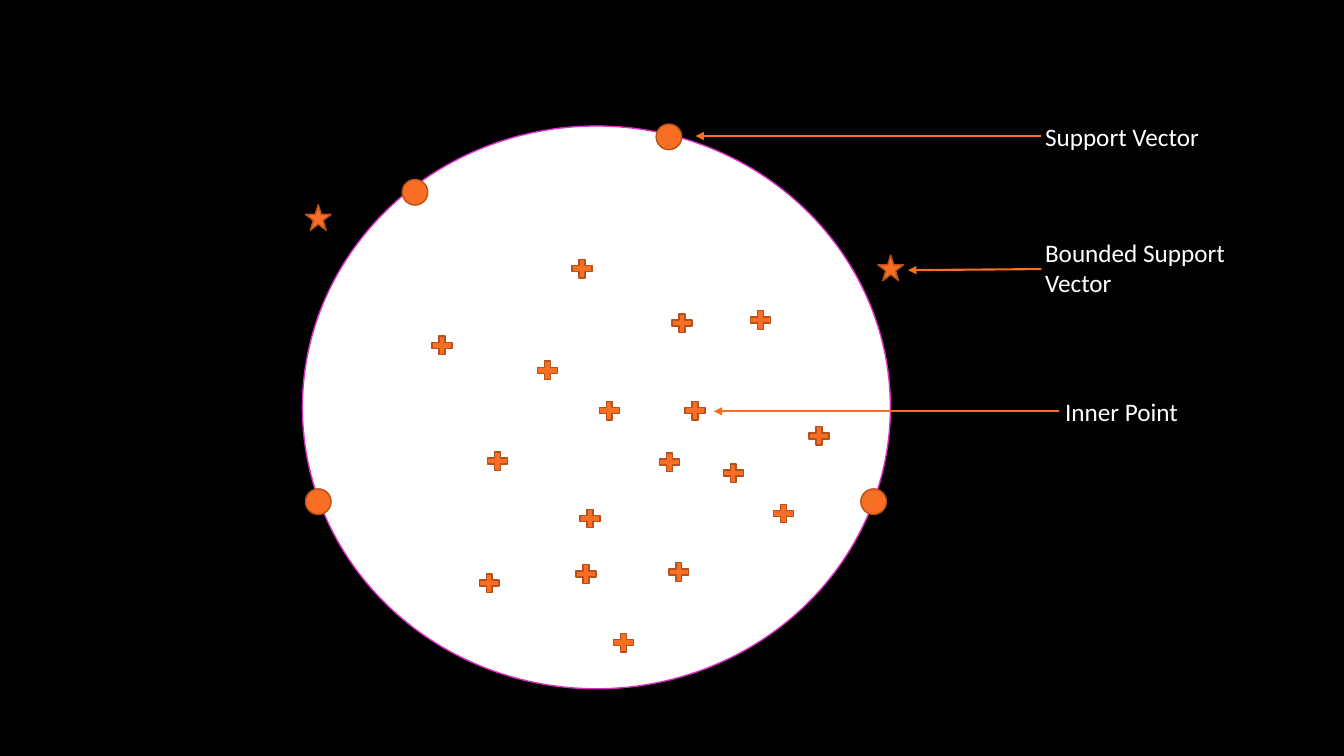
import pptx
import pptx.dml.color
import pptx.enum.shapes
import pptx.enum.text
import pptx.oxml.ns
import pptx.util
from lxml import etree

Pt = pptx.util.Pt
RGBColor = pptx.dml.color.RGBColor
SHAPE = pptx.enum.shapes.MSO_SHAPE
qn = pptx.oxml.ns.qn

BLACK = RGBColor(0x00, 0x00, 0x00)
WHITE = RGBColor(0xFF, 0xFF, 0xFF)
MAGENTA = RGBColor(0xDB, 0x30, 0xC7)
ORANGE = RGBColor(0xF8, 0x6E, 0x24)
BROWN = RGBColor(0xB7, 0x51, 0x1B)

deck = pptx.Presentation()
deck.slide_width, deck.slide_height = Pt(960), Pt(540)
page = deck.slides.add_slide(deck.slide_layouts[6])
page.background.fill.solid()
page.background.fill.fore_color.rgb = BLACK


def add_marker(kind, left, top, width, height, fill, outline):
    marker = page.shapes.add_shape(kind, Pt(left), Pt(top), Pt(width), Pt(height))
    marker.shadow.inherit = False
    marker.fill.solid()
    marker.fill.fore_color.rgb = fill
    marker.line.color.rgb = outline
    marker.line.width = Pt(1)


# Enclosing sphere
add_marker(SHAPE.OVAL, 216, 90, 420, 402, WHITE, MAGENTA)

# Data points: kind, width, height, top left corners
support_vectors = [(468.7, 88.6), (287.3, 128.2), (614.9, 349.2), (218.2, 349.2)]
inner_points = [
    (406.1, 182.9), (306, 237.6), (425.5, 284.4), (477.4, 221.8), (345.6, 320.4),
    (339.8, 407.5), (409, 401), (411.8, 361.4), (486.7, 284.4), (468.7, 321.1),
    (475.2, 399.6), (514.1, 329), (533.5, 219.6), (575.3, 302.4), (550.1, 357.8),
    (381.6, 255.6), (435.6, 450),
]
bounded_vectors = [(218.2, 146.2), (627.1, 182.2)]
for kind, width, height, corners in [
    (SHAPE.FLOWCHART_CONNECTOR, 18.3, 18.3, support_vectors),
    (SHAPE.MATH_PLUS, 19.4, 18, inner_points),
    (SHAPE.STAR_5_POINT, 18.3, 18.3, bounded_vectors),
]:
    for left, top in corners:
        add_marker(kind, left, top, width, height, ORANGE, BROWN)

# Labels with arrows: text, text box, arrow start, arrow end
labels = [
    ("Support Vector", (739.4, 82.8, 126.7, 28.8), (743.8, 97.2), (496.8, 97.2)),
    ("Bounded Support Vector", (739.4, 165.6, 159.1, 51.1), (743.8, 192.2), (648.7, 193)),
    ("Inner Point", (753.8, 279.4, 126.7, 28.8), (756.7, 293.8), (509.8, 293.8)),
]
for text, frame, start, end in labels:
    arrow = page.shapes.add_connector(
        pptx.enum.shapes.MSO_CONNECTOR.STRAIGHT, *map(Pt, start + end))
    arrow.line.color.rgb = ORANGE
    arrow.line.width = Pt(1.5)
    properties = arrow._element.spPr
    etree.SubElement(properties.find(qn("a:ln")), qn("a:tailEnd"), type="triangle")
    etree.SubElement(properties, qn("a:effectLst"))

    box = page.shapes.add_textbox(*map(Pt, frame))
    box.text_frame.word_wrap = True
    box.text_frame.auto_size = pptx.enum.text.MSO_AUTO_SIZE.SHAPE_TO_FIT_TEXT
    para = box.text_frame.paragraphs[0]
    para.text = text
    para.font.name = "Calibri"
    para.font.size = Pt(18)
    para.font.color.rgb = WHITE

deck.save("out.pptx")
